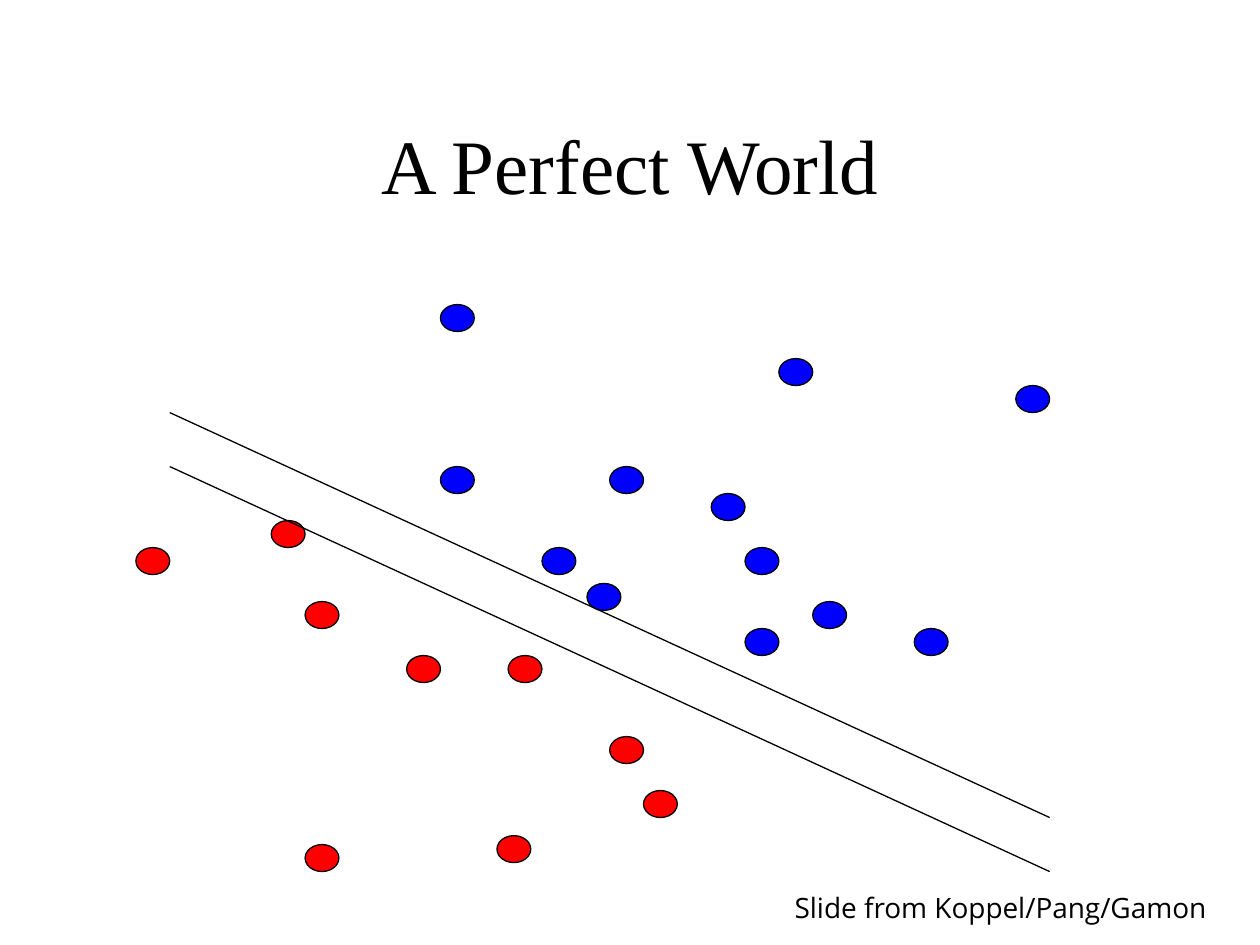
from lxml.etree import SubElement
from pptx import Presentation
from pptx.dml.color import RGBColor
from pptx.enum.shapes import MSO_CONNECTOR, MSO_SHAPE
from pptx.enum.text import MSO_ANCHOR, MSO_AUTO_SIZE, PP_ALIGN
from pptx.oxml.ns import qn
from pptx.util import Cm, Pt

TITLE = "A Perfect World"
CREDIT = "Slide from Koppel/Pang/Gamon"
COLORS = {"red": "FF0000", "blue": "0000FF", "black": "000000"}
POINTS = {
    "red": [(0, 9), (4, 8), (5, 11), (5, 20), (8, 13), (14, 16),
            (11, 13), (10.67, 19.67), (15, 18)],
    "blue": [(12, 9), (9, 6), (17, 7), (14, 6), (23, 12), (18, 12),
             (20, 11), (18, 9), (19, 2), (13.33, 10.33), (26, 3), (9, 0)],
}
MARGINS = [((1, 6), (27, 21)), ((1, 4), (27, 19))]

LEFT, TOP = Cm(2.74), Cm(6.14)
CELL_W, CELL_H = Cm(18.42) / 27, Cm(11.43) / 21


def color(name):
    return RGBColor.from_string(COLORS[name])


def place(col, row):
    return round(LEFT + col * CELL_W), round(TOP + row * CELL_H)


def outline(shape):
    shape.line.color.rgb = color("black")
    shape.line.width = Pt(0.75)


def write(shape, text, font, size, align):
    tf = shape.text_frame
    tf.text = text
    tf.word_wrap = True
    p = tf.paragraphs[0]
    p.alignment = align
    r = p.runs[0]
    r.font.name = font
    r.font.size = Pt(size)
    r.font.color.rgb = color("black")
    return tf


prs = Presentation()
prs.slide_width, prs.slide_height = Cm(25.4), Cm(19.05)
s = prs.slides.add_slide(prs.slide_layouts[5])

title = s.shapes.title
title.left, title.top, title.width, title.height = Cm(1.9), Cm(1.7), Cm(21.6), Cm(3.18)
tf = write(title, TITLE, "Times New Roman", 44, PP_ALIGN.CENTER)
tf.vertical_anchor = MSO_ANCHOR.MIDDLE

for name, points in POINTS.items():
    for point in points:
        dot = s.shapes.add_shape(MSO_SHAPE.OVAL, *place(*point), round(CELL_W), round(CELL_H))
        dot.shadow.inherit = False
        dot.fill.solid()
        dot.fill.fore_color.rgb = color(name)
        outline(dot)

for start, end in MARGINS:
    line = s.shapes.add_connector(MSO_CONNECTOR.STRAIGHT, *place(*start), *place(*end))
    outline(line)
    SubElement(line._element.spPr, qn("a:effectLst"))

credit = s.shapes.add_textbox(Cm(15.77), Cm(17.83), Cm(9.63), Cm(0.94))
tf = write(credit, CREDIT, "Open Sans", 16, PP_ALIGN.LEFT)
tf.auto_size = MSO_AUTO_SIZE.SHAPE_TO_FIT_TEXT

prs.save("out.pptx")
